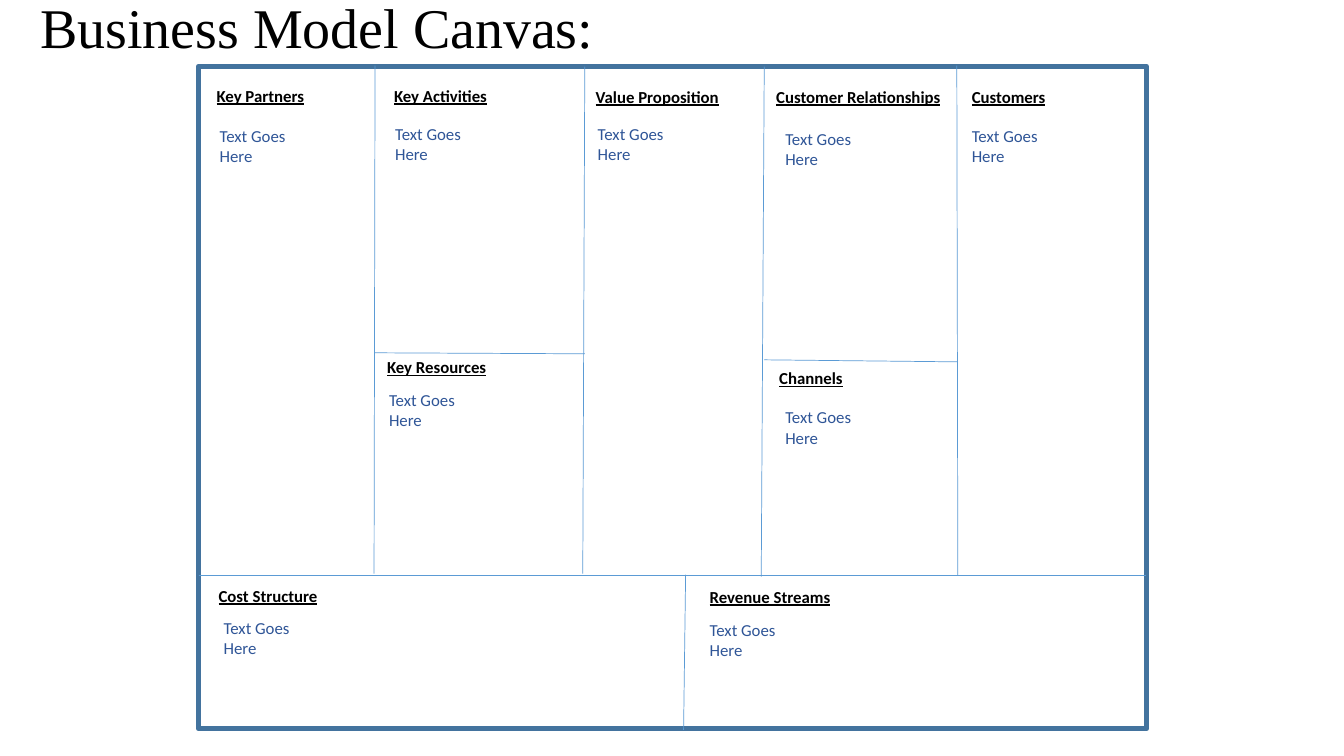
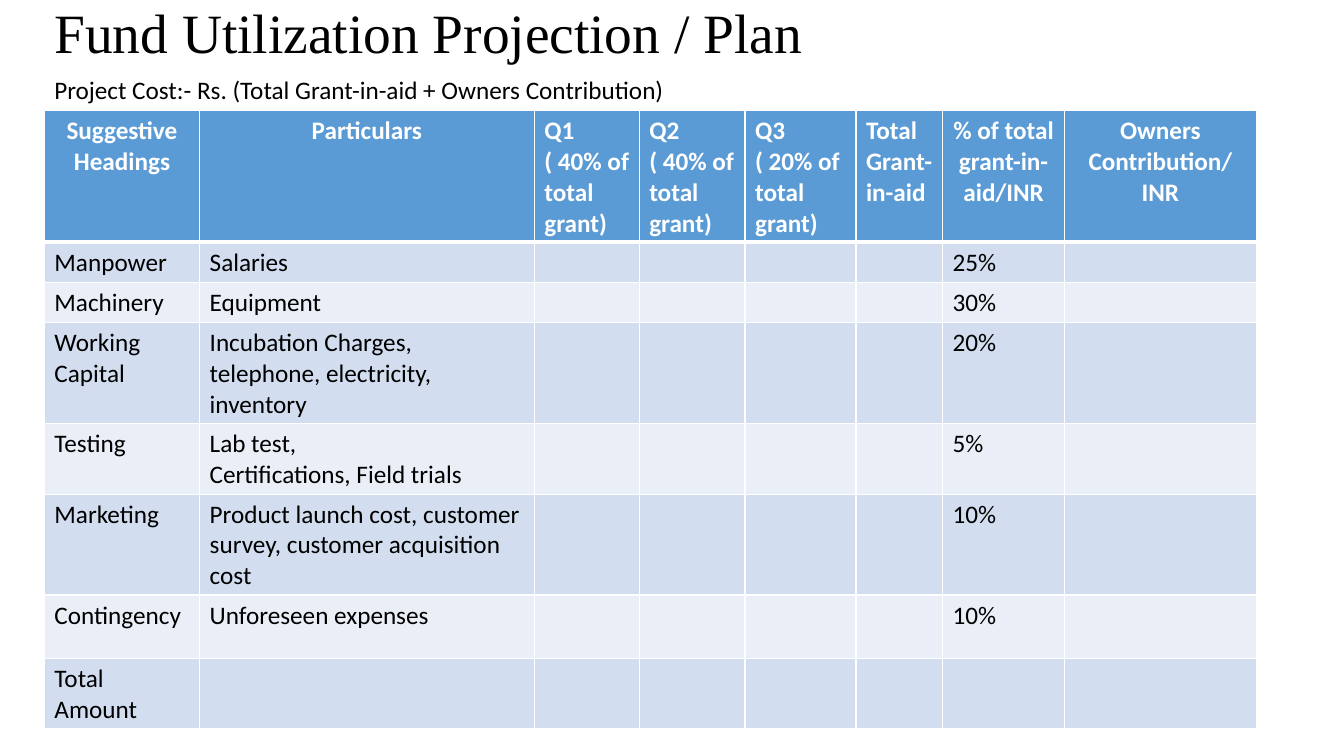
"""Build a business model canvas slide and a fund utilization slide."""
from lxml import etree
from pptx import Presentation
from pptx.dml.color import RGBColor
from pptx.enum.shapes import MSO_CONNECTOR, MSO_SHAPE
from pptx.enum.text import MSO_ANCHOR, PP_ALIGN
from pptx.oxml import parse_xml
from pptx.oxml.ns import qn
from pptx.util import Inches, Pt

LINE = MSO_CONNECTOR.STRAIGHT
RECT = MSO_SHAPE.RECTANGLE
MIDDLE = MSO_ANCHOR.MIDDLE
CENTER, LEFT = PP_ALIGN.CENTER, PP_ALIGN.LEFT
SERIF, SANS = "Times New Roman", "Calibri"
DRAW = "http://schemas.openxmlformats.org/drawingml/2006/main"

COLORS = {
    "ink": "000000", "white": "FFFFFF", "frame": "43739E", "rule": "5B9BD5",
    "note": "2F5597", "head": "5B9BD5", "odd": "D2DEEF", "even": "EAEFF7",
}

FRAME = (1.97, 0.66, 9.4, 6.57)
RULES = [
    (1.97, 5.71, 11.37, 5.71),
    (3.72, 0.65, 3.71, 5.69),
    (5.8, 0.66, 5.78, 5.69),
    (7.58, 0.66, 7.55, 5.72),
    (9.49, 0.65, 9.5, 5.71),
    (3.72, 3.5, 5.8, 3.51),
    (7.58, 3.57, 9.5, 3.59),
    (6.8, 5.7, 6.78, 7.24),
]
NOTE = "Text Goes Here"
BLOCKS = [
    ("Key Partners", (2.05, 0.8, 1.63), (2.08, 1.2)),
    ("Key Activities", (3.81, 0.8, 1.87), (3.82, 1.18)),
    ("Key Resources", (3.74, 3.49, 2.01), (3.76, 3.82)),
    ("Value Proposition", (5.81, 0.81, 1.77), (5.83, 1.18)),
    ("Customer Relationships", (7.6, 0.81, 1.84), (7.69, 1.23)),
    ("Channels", (7.63, 3.6, 1.87), (7.69, 3.99)),
    ("Customers", (9.54, 0.81, 1.73), (9.54, 1.2)),
    ("Cost Structure", (2.07, 5.76, 4.56), (2.12, 6.08)),
    ("Revenue Streams", (6.94, 5.77, 4.16), (6.94, 6.1)),
]

COST = "Project Cost:- Rs. (Total Grant-in-aid + Owners Contribution)"
COLUMNS = [
    ("Suggestive Headings", 1.54, CENTER),
    ("Particulars", 3.32, CENTER),
    ("Q1\n( 40% of total grant)", 1.04, LEFT),
    ("Q2\n( 40% of total grant)", 1.05, LEFT),
    ("Q3\n( 20% of total grant)", 1.1, LEFT),
    ("Total\nGrant-in-aid", 0.86, LEFT),
    ("% of total grant-in-aid/INR", 1.21, CENTER),
    ("Owners Contribution/\nINR", 1.9, CENTER),
]
FUNDS = [
    ("Manpower", "Salaries", "25%", 0.36),
    ("Machinery", "Equipment", "30%", 0.36),
    ("Working Capital",
     "Incubation Charges, telephone, electricity, inventory", "20%", 0.83),
    ("Testing", "Lab test,\nCertifications, Field trials", "5%", 0.63),
    ("Marketing",
     "Product launch cost, customer survey, customer acquisition cost",
     "10%", 0.78),
    ("Contingency", "Unforeseen expenses", "10%", 0.63),
    ("Total Amount", "", "", 0.36),
]
HEAD_H = 1.17


def color(name):
    return RGBColor.from_string(COLORS[name])


def write(frame, text, size, ink="ink", face=SANS, bold=False, under=False,
          align=LEFT):
    frame.text = text
    for para in frame.paragraphs:
        para.alignment = align
        para.font.size = Pt(size)
        for run in para.runs:
            font = run.font
            font.name, font.size = face, Pt(size)
            font.bold, font.underline = bold, under
            font.color.rgb = color(ink)


def add_text(slide, box, text, size, **style):
    frame = slide.shapes.add_textbox(*map(Inches, box)).text_frame
    frame.word_wrap = True
    write(frame, text, size, **style)
    return frame


def add_title(slide, box, text, size):
    frame = add_text(slide, box, text, size, face=SERIF)
    frame.vertical_anchor = MIDDLE
    frame.paragraphs[0].line_spacing = 0.9


def add_rule(slide, ends):
    rule = slide.shapes.add_connector(LINE, *map(Inches, ends))
    rule.line.color.rgb = color("rule")
    rule.line.width = Pt(0.5)
    etree.SubElement(rule.element.spPr, qn("a:effectLst"))


def add_edges(cell, base):
    props = cell._tc.get_or_add_tcPr()
    for spot, side in enumerate("LRTB"):
        width = Pt(base if side == "B" else 1)
        props.insert(spot, parse_xml(
            f'<a:ln{side} xmlns:a="{DRAW}" w="{width}"><a:solidFill>'
            f'<a:srgbClr val="{COLORS["white"]}"/></a:solidFill></a:ln{side}>'))


def fill_cell(cell, text, fill, base=1, **style):
    write(cell.text_frame, text, 18, **style)
    cell.fill.solid()
    cell.fill.fore_color.rgb = color(fill)
    add_edges(cell, base)


def build_canvas(slide):
    add_title(slide, (0.3, -0.01, 11.5, 0.62), "Business Model Canvas:", 40)
    frame = slide.shapes.add_shape(RECT, *map(Inches, FRAME))
    frame.shadow.inherit = False
    frame.fill.background()
    frame.line.color.rgb = color("frame")
    frame.line.width = Pt(4)
    for ends in RULES:
        add_rule(slide, ends)
    for head, top, spot in BLOCKS:
        add_text(slide, (*top, 0.3), head, 12, bold=True, under=True)
        add_text(slide, (*spot, 1.11, 0.5), NOTE, 12, ink="note")


def build_funds(slide):
    add_title(slide, (0.44, 0.02, 11.5, 0.67),
              "Fund Utilization Projection / Plan", 39.6)
    add_text(slide, (0.44, 0.69, 8.8, 0.4), COST, 18)
    heights = [HEAD_H] + [fund[-1] for fund in FUNDS]
    width = sum(col[1] for col in COLUMNS)
    box = map(Inches, (0.44, 1.1, width, sum(heights)))
    table = slide.shapes.add_table(len(heights), len(COLUMNS), *box).table
    for row, high in zip(table.rows, heights):
        row.height = Inches(high)
    for c, (head, wide, align) in enumerate(COLUMNS):
        table.columns[c].width = Inches(wide)
        fill_cell(table.cell(0, c), head, "head", 3, ink="white", bold=True,
                  align=align)
    for r, (name, parts, share, _) in enumerate(FUNDS, 1):
        texts = (name, parts, "", "", "", "", share, "")
        for c, text in enumerate(texts):
            fill_cell(table.cell(r, c), text, "odd" if r % 2 else "even")


def main():
    deck = Presentation()
    deck.slide_width, deck.slide_height = Inches(13.33), Inches(7.5)
    for build in (build_canvas, build_funds):
        build(deck.slides.add_slide(deck.slide_layouts[6]))
    deck.save("out.pptx")


if __name__ == "__main__":
    main()
